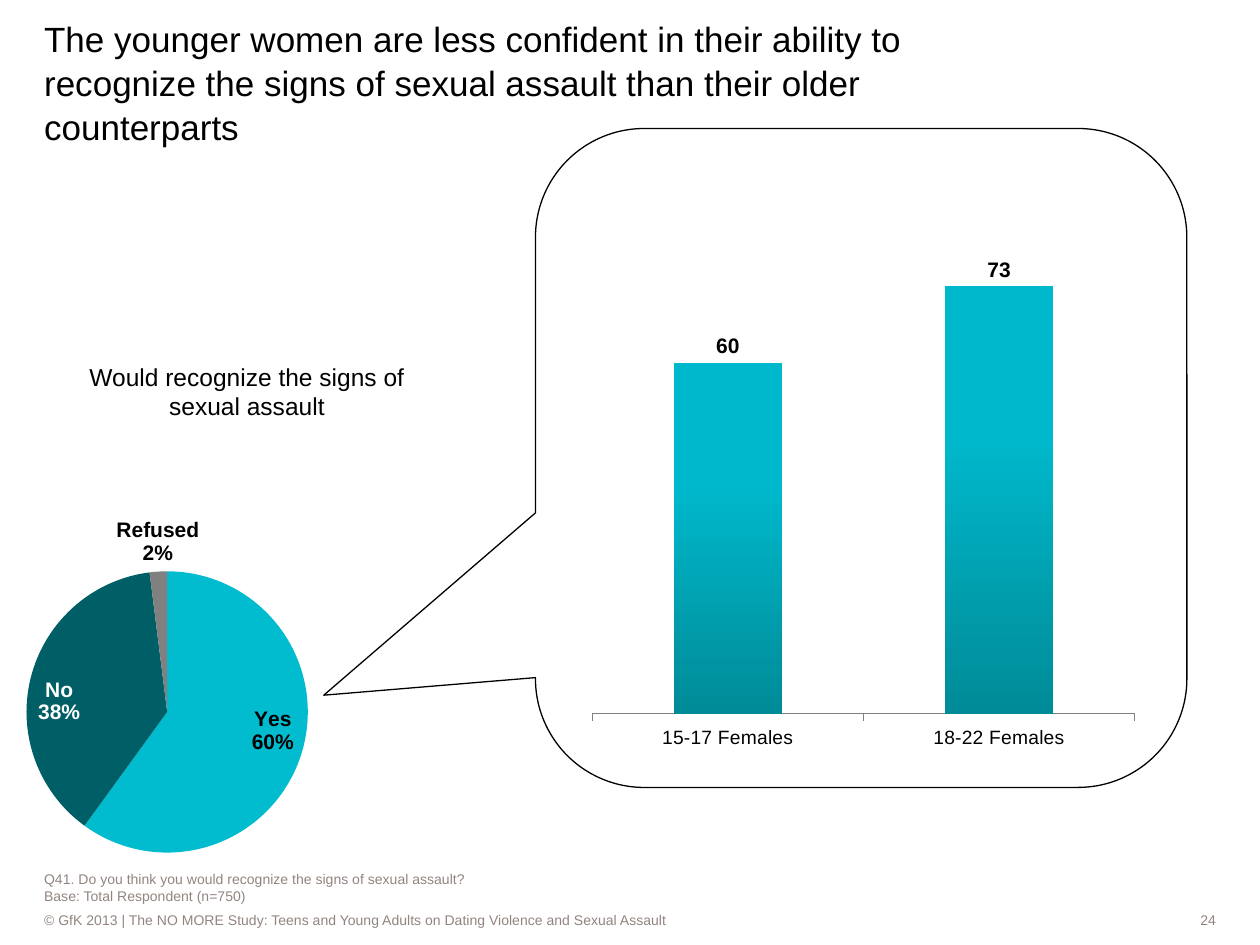
from lxml import etree
from pptx import Presentation
from pptx.chart.data import CategoryChartData
from pptx.dml.color import RGBColor
from pptx.enum.chart import XL_CHART_TYPE, XL_LABEL_POSITION, XL_TICK_LABEL_POSITION, XL_TICK_MARK
from pptx.enum.shapes import MSO_SHAPE
from pptx.enum.text import MSO_ANCHOR, PP_ALIGN
from pptx.oxml.ns import qn
from pptx.util import Inches, Pt

PIE, COLUMN = XL_CHART_TYPE.PIE, XL_CHART_TYPE.COLUMN_CLUSTERED
INSIDE, OUTSIDE = XL_LABEL_POSITION.INSIDE_END, XL_LABEL_POSITION.OUTSIDE_END
LEFT, CENTER, RIGHT = PP_ALIGN.LEFT, PP_ALIGN.CENTER, PP_ALIGN.RIGHT
MIDDLE, BOTTOM = MSO_ANCHOR.MIDDLE, MSO_ANCHOR.BOTTOM
FONT = "Arial"
COLORS = {name: RGBColor.from_string(value) for name, value in {
    "black": "000000", "white": "FFFFFF", "note": "928580", "gray": "808080",
    "cyan": "00BCCE", "teal": "005E67", "bar_top": "00B8CB", "bar_base": "008B98",
}.items()}

deck = Presentation()
deck.slide_width, deck.slide_height = Inches(10), Inches(7.5)
page = deck.slides.add_slide(deck.slide_layouts[5])


def write(box, place, lines, size, color, align=LEFT, anchor=MIDDLE, spacing=1.0, bottom=0):
    """Place a text shape and fill it, one paragraph a line."""
    box.left, box.top, box.width, box.height = [Inches(v) for v in place]
    frame = box.text_frame
    frame.word_wrap = True
    frame.vertical_anchor = anchor
    frame.margin_left = frame.margin_top = frame.margin_right = 0
    frame.margin_bottom = Inches(bottom)
    for i, line in enumerate(lines):
        para = frame.add_paragraph() if i else frame.paragraphs[0]
        para.alignment = align
        para.line_spacing = spacing
        para.space_before = Pt(0)
        for j, part in enumerate(line.split("\n")):
            if j:
                para.add_line_break()
            span = para.add_run()
            span.text = part
            span.font.name, span.font.size = FONT, Pt(size)
            span.font.color.rgb = COLORS[color]


def place_chart(kind, place, categories, values, number_format, plot_area):
    """Add a one-series chart with a fixed inner plot area."""
    data = CategoryChartData(number_format=number_format)
    data.categories = categories
    data.add_series("Series 1", values)
    chart = page.shapes.add_chart(kind, *[Inches(v) for v in place], data).chart
    chart.has_legend = chart.has_title = False
    chart.font.name, chart.font.size = FONT, Pt(18)
    chart.font.color.rgb = COLORS["black"]
    area = chart._chartSpace.find(".//" + qn("c:plotArea"))
    layout = area.find(qn("c:layout"))
    if layout is None:
        layout = etree.Element(qn("c:layout"))
        area.insert(0, layout)
    manual = etree.SubElement(layout, qn("c:manualLayout"))
    settings = [("layoutTarget", "inner"), ("xMode", "edge"), ("yMode", "edge")]
    for tag, value in settings + list(zip("xywh", plot_area)):
        etree.SubElement(manual, qn("c:" + tag)).set("val", str(value))
    return chart


# Title
write(page.shapes.title, (0.35, 0.17, 7.9, 1),
      ["The younger women are less confident in their ability to recognize the signs "
       "of sexual assault than their older counterparts"],
      20, "black", anchor=BOTTOM, spacing=1.05)

# Footer, page number, question note and pie heading
texts = [
    ((0.35, 7.22, 7.72, 0.16),
     ["© GfK 2013 | The NO MORE Study: Teens and Young Adults on Dating Violence "
      "and Sexual Assault"], 8, "note", LEFT, MIDDLE, 1.0, 0),
    ((8.23, 7.22, 1.42, 0.16), ["24"], 8, "note", RIGHT, MIDDLE, 1.0, 0),
    ((0.35, 6.91, 9.29, 0.31),
     ["Q41. Do you think you would recognize the signs of sexual assault?",
      "Base: Total Respondent (n=750)"], 8, "note", LEFT, BOTTOM, 1.05, 0.04),
    ((0.67, 2.95, 2.58, 0.31),
     ["Would recognize the signs of\nsexual assault"], 14, "black", CENTER, MIDDLE, 1.0, 0),
]
for place, *style in texts:
    write(page.shapes.add_textbox(0, 0, 0, 0), place, *style)

# Pie of all respondents
answers = [("Yes", 0.6, "cyan", "black", INSIDE),
           ("No", 0.38, "teal", "white", INSIDE),
           ("Refused", 0.02, "gray", "black", OUTSIDE)]
pie = place_chart(PIE, (-0.67, 4, 4.17, 2.83), [a[0] for a in answers],
                  [a[1] for a in answers], "0%", (0.161, 0.189, 0.636, 0.789))
pie_series = pie.plots[0].series[0]
for i, (_, _, fill, text, position) in enumerate(answers):
    point = pie_series.points[i]
    point.format.fill.solid()
    point.format.fill.fore_color.rgb = COLORS[fill]
    label = point.data_label
    label.font.name, label.font.size, label.font.bold = FONT, Pt(12), True
    label.font.color.rgb = COLORS[text]
    label.position = position
# Category name above the value in each label
for label in pie._chartSpace.iter(qn("c:dLbl")):
    label.find(qn("c:showCatName")).set("val", "1")
    etree.SubElement(label, qn("c:separator")).text = "\n"

# Columns by age group
columns = place_chart(COLUMN, (4.42, 1.02, 4.67, 5.16), ["15-17 Females", "18-22 Females"],
                      [60, 73], "General", (0.06, 0, 0.922, 0.9))
plot = columns.plots[0]
plot.gap_width = 150
plot.vary_by_categories = False
bar_fill = plot.series[0].format.fill
bar_fill.gradient()
bar_fill.gradient_angle = 90
base, top = bar_fill.gradient_stops
base.color.rgb, base.position = COLORS["bar_base"], 0
top.color.rgb, top.position = COLORS["bar_top"], 0.65
plot.has_data_labels = True
labels = plot.data_labels
labels.show_value = True
labels.position = OUTSIDE
labels.font.name, labels.font.size, labels.font.bold = FONT, Pt(12), True
labels.font.color.rgb = COLORS["black"]

groups, scale = columns.category_axis, columns.value_axis
groups.major_tick_mark = XL_TICK_MARK.OUTSIDE
groups.tick_labels.font.name, groups.tick_labels.font.size = FONT, Pt(11)
groups.format.line.color.rgb = COLORS["gray"]
groups.format.line.width = Pt(0.75)
scale.minimum_scale, scale.maximum_scale = 0, 100
scale.has_major_gridlines = False
scale.tick_label_position = XL_TICK_LABEL_POSITION.NONE
scale.visible = False

# Callout from the pie around the columns
callout = page.shapes.add_shape(MSO_SHAPE.ROUNDED_RECTANGULAR_CALLOUT, Inches(4.25),
                                Inches(1.02), Inches(5.17), Inches(5.23))
for i, value in enumerate((-0.825, 0.36, 0.167)):
    callout.adjustments[i] = value
callout.shadow.inherit = False
callout.fill.background()
callout.line.color.rgb = COLORS["black"]
callout.line.width = Pt(0.75)

deck.save("out.pptx")
